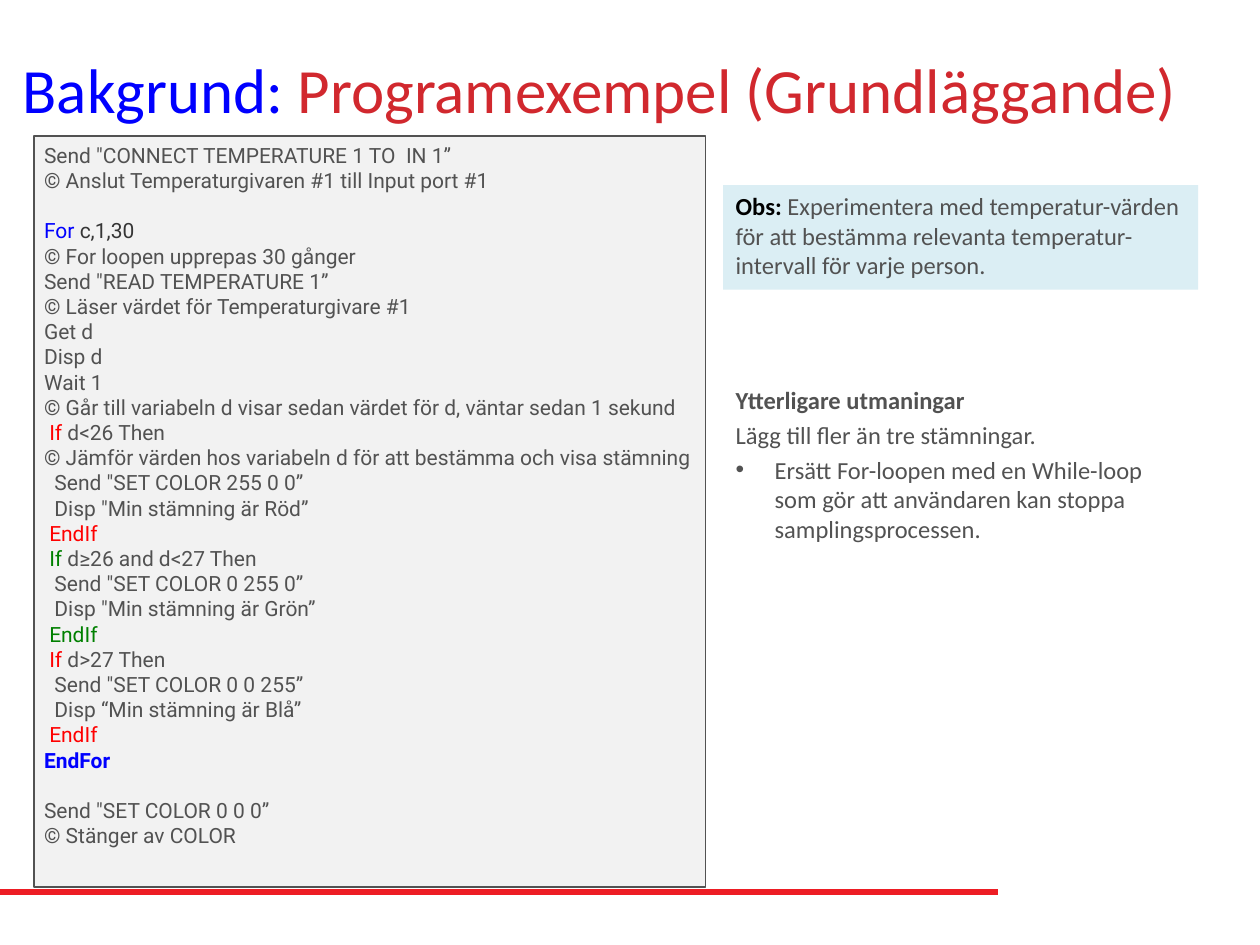
from lxml import etree
from pptx import Presentation
from pptx.dml.color import RGBColor
from pptx.enum.shapes import MSO_CONNECTOR as Connector, MSO_SHAPE as Shape
from pptx.enum.text import MSO_ANCHOR as Anchor, PP_ALIGN as Align
from pptx.oxml.ns import qn
from pptx.util import Inches, Pt

COLORS = {
    "grey": "525252", "dark": "363636", "black": "000000",
    "blue": "0000FF", "red": "FF0000", "green": "008000",
    "title": "D1282E", "rule": "ED1D24", "code": "F2F2F2", "note": "DBEEF4",
}


def color(name):
    return RGBColor.from_string(COLORS[name])


def add_spans(para, spans, size, font="Calibri"):
    """Write (text, colour, bold) spans into a paragraph."""
    para.alignment = Align.LEFT
    for text, tint, bold in spans:
        span = para.add_run()
        span.text = text
        style = {"name": font, "size": Pt(size), "bold": bold}
        for key, value in style.items():
            setattr(span.font, key, value)
        span.font.color.rgb = color(tint)


deck = Presentation()
deck.slide_width, deck.slide_height = Inches(10), Inches(7.5)
page = deck.slides.add_slide(deck.slide_layouts[5])

# Bottom rule
rule = page.shapes.add_connector(
    Connector.STRAIGHT, 0, Inches(7.08), Inches(7.92), Inches(7.08))
rule.line.color.rgb = color("rule")
rule.line.width = Pt(3)
etree.SubElement(rule._element.spPr, qn("a:effectLst"))

# Title
title = page.shapes.title
place = {"left": 0.08, "top": 0.08, "width": 9.92, "height": 1.25}
for key, value in place.items():
    setattr(title, key, Inches(value))
title.text_frame.vertical_anchor = Anchor.MIDDLE
add_spans(title.text_frame.paragraphs[0],
          [("Bakgrund: ", "blue", False),
           ("Programexempel (Grundläggande)", "title", False)], 36)

# Code panel and note panel
panels = {}
for name, left, top, width, height, inset in [
    ("code", 0.27, 1.08, 5.33, 5.96, 0.08),
    ("note", 5.74, 1.47, 3.77, 0.83, 0.1),
]:
    box = page.shapes.add_shape(
        Shape.RECTANGLE, Inches(left), Inches(top), Inches(width), Inches(height))
    box.shadow.inherit = False
    box.fill.solid()
    box.fill.fore_color.rgb = color(name)
    box.line.fill.background()
    frame = {"word_wrap": True, "vertical_anchor": Anchor.TOP,
             "margin_left": Inches(inset), "margin_right": Inches(inset)}
    for key, value in frame.items():
        setattr(box.text_frame, key, value)
    panels[name] = box
panels["code"].line.color.rgb = color("grey")
panels["code"].line.width = Pt(0.75)

# Program: each line is a coloured keyword and the rest of the line
program = [
    ("", None, "Send \"CONNECT TEMPERATURE 1 TO  IN 1”"),
    ("", None, "© Anslut Temperaturgivaren #1 till Input port #1"),
    ("For ", "blue", "c,1,30"),
    ("", None, "© For loopen upprepas 30 gånger"),
    ("", None, "Send \"READ TEMPERATURE 1”"),
    ("", None, "© Läser värdet för Temperaturgivare #1"),
    ("", None, "Get d"),
    ("", None, "Disp d"),
    ("", None, "Wait 1"),
    ("", None, "© Går till variabeln d visar sedan värdet för d, väntar sedan 1 sekund"),
    (" If ", "red", "d<26 Then"),
    ("", None, "© Jämför värden hos variabeln d för att bestämma och visa stämning"),
    ("", None, "  Send \"SET COLOR 255 0 0”"),
    ("", None, "  Disp \"Min stämning är Röd”"),
    (" EndIf", "red", ""),
    (" If ", "green", "d≥26 and d<27 Then"),
    ("", None, "  Send \"SET COLOR 0 255 0”"),
    ("", None, "  Disp \"Min stämning är Grön”"),
    (" EndIf", "green", ""),
    (" If ", "red", "d>27 Then"),
    ("", None, "  Send \"SET COLOR 0 0 255”"),
    ("", None, "  Disp “Min stämning är Blå”"),
    (" EndIf", "red", ""),
    ("EndFor", "blue", ""),
    ("", None, "Send \"SET COLOR 0 0 0”"),
    ("", None, "© Stänger av COLOR"),
]
section_starts = ("For ", "Send \"SET COLOR 0 0 0”")
code_frame = panels["code"].text_frame
for index, (keyword, tint, rest) in enumerate(program):
    para = code_frame.paragraphs[0] if index == 0 else code_frame.add_paragraph()
    if keyword in section_starts or rest in section_starts:
        para.space_before = Pt(14.4)
    rest_tint = "dark" if tint == "blue" else "grey"
    spans = [(keyword, tint, keyword == "EndFor"), (rest, rest_tint, False)]
    add_spans(para, [span for span in spans if span[0]], 12, "Roboto")

# Note
add_spans(panels["note"].text_frame.paragraphs[0],
          [("Obs: ", "black", True),
           ("Experimentera med temperatur-värden för att bestämma relevanta "
            "temperatur-intervall för varje person.", "grey", False)], 14)

# Further challenges
box = page.shapes.add_textbox(Inches(5.74), Inches(3.01), Inches(3.77), Inches(1.76))
box.text_frame.word_wrap = True
challenges = [
    ("Ytterligare utmaningar", True, False),
    ("Lägg till fler än tre stämningar.", False, False),
    ("Ersätt For-loopen med en While-loop som gör att användaren kan stoppa "
     "samplingsprocessen.", False, True),
]
for index, (text, bold, bullet) in enumerate(challenges):
    para = box.text_frame.paragraphs[0] if index == 0 else box.text_frame.add_paragraph()
    para.space_after = Pt(3)
    if bullet:
        props = para._p.get_or_add_pPr()
        props.set("marL", str(Inches(0.31)))
        props.set("indent", str(-Inches(0.31)))
        etree.SubElement(props, qn("a:buFont")).set("typeface", "Arial")
        etree.SubElement(props, qn("a:buChar")).set("char", "•")
    add_spans(para, [(text, "grey", bold)], 14)

deck.save("out.pptx")
